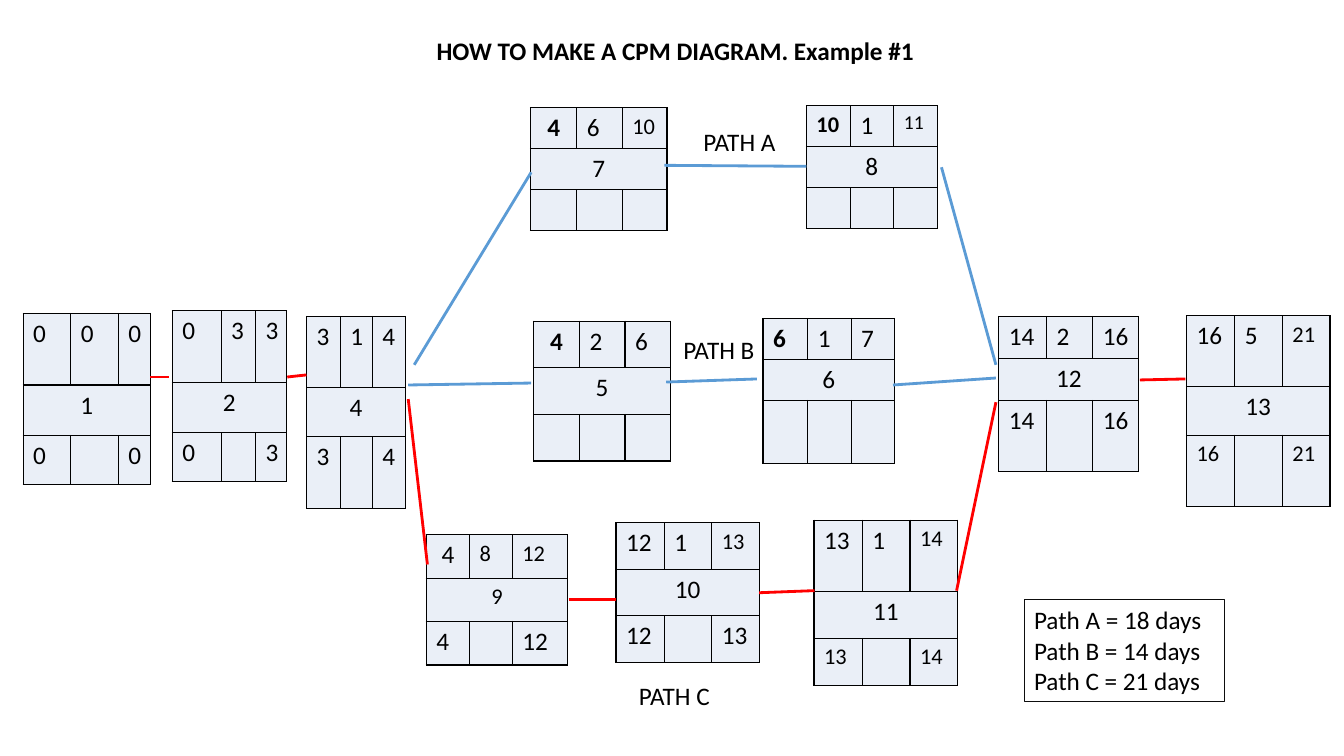
from dataclasses import dataclass

import pptx
import pptx.dml.color
import pptx.enum.shapes
import pptx.enum.text
import pptx.oxml
import pptx.oxml.ns
import pptx.util
from pptx.util import Pt

BLACK = pptx.dml.color.RGBColor(0x00, 0x00, 0x00)
FRAME = pptx.dml.color.RGBColor(0x0D, 0x0D, 0x0D)
CELL = pptx.dml.color.RGBColor(0xEA, 0xEF, 0xF7)
RED = pptx.dml.color.RGBColor(0xFF, 0x00, 0x00)
BLUE = pptx.dml.color.RGBColor(0x5B, 0x9B, 0xD5)
LEFT = pptx.enum.text.PP_ALIGN.LEFT
CENTER = pptx.enum.text.PP_ALIGN.CENTER


@dataclass
class Entry:
    """Text of one activity cell with its look."""
    text: str = ""
    size: int = 18
    bold: bool = False
    alignment: int = LEFT


BLANK = Entry()
EMPTY_ROW = [BLANK] * 3


def row(*values):
    """Turn plain numbers into entries and keep entries as they are."""
    return [value if isinstance(value, Entry) else Entry(str(value)) for value in values]


def small(number, size=16):
    """Give an entry in a smaller size."""
    return Entry(str(number), size)


BOLD_FOUR = Entry("4", bold=True, alignment=CENTER)

ACTIVITIES = [
    ((16.5, 224), (34, 34, 23), (51, 36, 35),
     row(0, 0, 0), small(1, 18), row(0, BLANK, 0)),
    ((123, 222), (35, 24.5, 22), (51, 36, 35),
     row(0, 3, 3), small(2, 18), row(0, BLANK, 3)),
    ((219, 226), (24, 23, 23.5), (51, 35, 51),
     row(3, 1, 4), small(4, 18), row(3, BLANK, 4)),
    ((381, 229.5), (33, 32.5, 32.5), (33.3, 33.3, 33.3),
     row(BOLD_FOUR, 2, 6), small(5, 18), EMPTY_ROW),
    ((545, 227.5), (32, 31, 31), (29.3, 29.3, 45),
     row(Entry("6", bold=True), 1, 7), small(6, 18), EMPTY_ROW),
    ((713.5, 226), (34, 33, 33), (30, 30, 51),
     row(14, 2, 16), small(12, 18), row(14, BLANK, 16)),
    ((847.5, 225.5), (34.5, 34, 34), (50.5, 35, 51),
     row(16, 5, small(21)), small(13, 18), row(small(16), BLANK, small(21))),
    ((379, 77), (33, 32.5, 32), (29.3, 29.3, 29.3),
     row(BOLD_FOUR, 6, small(10)), small(7, 18), EMPTY_ROW),
    ((304.5, 382), (31, 30.5, 39.5), (31, 31, 31),
     row(Entry("4", alignment=CENTER), small(8), small(12)), small(9), row(4, BLANK, 12)),
    ((576, 75.5), (31.5, 31, 31), (29.3, 29.3, 29.3),
     row(Entry("10", 16, True), 1, small(11, 14)), small(8, 18), EMPTY_ROW),
    ((440, 373.5), (34.5, 34, 34), (33.2, 33.2, 33.2),
     row(12, 1, small(13)), small(10, 18), row(12, BLANK, 13)),
    ((581.5, 371.5), (34.5, 34, 34), (51, 33.5, 33.5),
     row(13, 1, small(14)), small(11, 18), row(small(13), BLANK, small(14))),
]

LINKS = [
    (RED, (107.3, 269.3), (121, 269.3)),
    (RED, (205.2, 269.3), (218.9, 267.8)),
    (BLUE, (637.9, 275), (711.4, 270)),
    (RED, (814.3, 271.4), (846.7, 270.7)),
    (BLUE, (291.6, 275), (379.4, 273.6)),
    (BLUE, (475.9, 272.9), (540.7, 270.7)),
    (BLUE, (474.5, 118.1), (576, 118.8)),
    (RED, (406.1, 428.4), (439.9, 428.4)),
    (RED, (542.2, 423.4), (581.8, 421.9)),
    (RED, (683.3, 421.9), (711.4, 287.3)),
    (RED, (291.6, 285.1), (305.3, 403.2)),
    (BLUE, (295.9, 260.6), (379.4, 123.1)),
    (BLUE, (672.5, 119.5), (711.4, 260.6)),
]


def set_font(paragraph, size=18, bold=False):
    """Give a paragraph the slide's typeface in black."""
    font = paragraph.font
    font.name, font.size, font.bold = "Calibri", Pt(size), bold
    font.color.rgb = BLACK


def style_cell(cell, entry):
    """Fill a cell, write its entry and rule its four sides."""
    paragraph = cell.text_frame.paragraphs[0]
    paragraph.text = entry.text
    paragraph.alignment = entry.alignment
    set_font(paragraph, entry.size, entry.bold)
    cell.fill.solid()
    cell.fill.fore_color.rgb = CELL
    properties = cell._tc.get_or_add_tcPr()
    for position, side in enumerate(("lnL", "lnR", "lnT", "lnB")):
        border = pptx.oxml.parse_xml(
            f'<a:{side} {pptx.oxml.ns.nsdecls("a")} w="12700"><a:solidFill>'
            f'<a:srgbClr val="{BLACK}"/></a:solidFill></a:{side}>')
        properties.insert(position, border)


def add_activity(slide, corner, widths, heights, top_row, activity, bottom_row):
    """Draw one activity as a three by three table with a merged middle row."""
    left, top = corner
    table = slide.shapes.add_table(
        3, 3, Pt(left), Pt(top), Pt(sum(widths)), Pt(sum(heights))).table
    table.first_row = table.horz_banding = False
    for column, width in zip(table.columns, widths):
        column.width = Pt(width)
    for table_row, height in zip(table.rows, heights):
        table_row.height = Pt(height)
    table.cell(1, 0).merge(table.cell(1, 2))
    activity.alignment = CENTER
    for table_row, entries in zip(table.rows, (top_row, [activity, BLANK, BLANK], bottom_row)):
        for cell, entry in zip(table_row.cells, entries):
            style_cell(cell, entry)


def add_link(slide, color, start, end):
    """Join two activities with a straight line."""
    connector = slide.shapes.add_connector(
        pptx.enum.shapes.MSO_CONNECTOR.STRAIGHT, *map(Pt, start + end))
    connector.line.color.rgb = color
    connector.line.width = Pt(2)
    connector._element.spPr.append(
        pptx.oxml.parse_xml(f'<a:effectLst {pptx.oxml.ns.nsdecls("a")}/>'))


def add_title(slide, left, top, width, height):
    """Write the slide title in its box."""
    frame = slide.shapes.add_textbox(*map(Pt, (left, top, width, height))).text_frame
    frame.word_wrap = True
    frame.vertical_anchor = pptx.enum.text.MSO_ANCHOR.BOTTOM
    paragraph = frame.paragraphs[0]
    paragraph.text = "HOW TO MAKE A CPM DIAGRAM. Example #1"
    paragraph.alignment = CENTER
    paragraph.line_spacing = 0.9
    set_font(paragraph, bold=True)


def add_path_label(slide, text, left, top):
    """Name a path beside its activities."""
    frame = slide.shapes.add_textbox(Pt(left), Pt(top), Pt(66), Pt(29)).text_frame
    frame.word_wrap = False
    frame.paragraphs[0].text = text
    set_font(frame.paragraphs[0])


def add_durations(slide, left, top, width, height):
    """List the path durations in a framed box."""
    shape = slide.shapes.add_shape(
        pptx.enum.shapes.MSO_SHAPE.RECTANGLE, *map(Pt, (left, top, width, height)))
    shape.shadow.inherit = False
    shape.fill.background()
    shape.line.color.rgb = FRAME
    shape.line.width = Pt(0.75)
    frame = shape.text_frame
    frame.word_wrap = True
    frame.vertical_anchor = pptx.enum.text.MSO_ANCHOR.TOP
    frame.text = "\n".join(
        f"Path {name} = {days} days" for name, days in (("A", 18), ("B", 14), ("C", 21)))
    for paragraph in frame.paragraphs:
        paragraph.alignment = LEFT
        set_font(paragraph)


def main():
    """Build the critical path slide and save it."""
    presentation = pptx.Presentation()
    presentation.slide_width, presentation.slide_height = Pt(960), Pt(540)
    slide = presentation.slides.add_slide(presentation.slide_layouts[6])
    add_title(slide, 122.4, 26.5, 720, 24.5)
    for activity in ACTIVITIES:
        add_activity(slide, *activity)
    for link in LINKS:
        add_link(slide, *link)
    add_path_label(slide, "PATH C", 449.3, 482.4)
    add_path_label(slide, "PATH B", 481, 235.4)
    add_path_label(slide, "PATH A", 495.4, 86.4)
    add_durations(slide, 731.5, 428.4, 143.3, 72.7)
    presentation.save("out.pptx")


if __name__ == "__main__":
    main()
